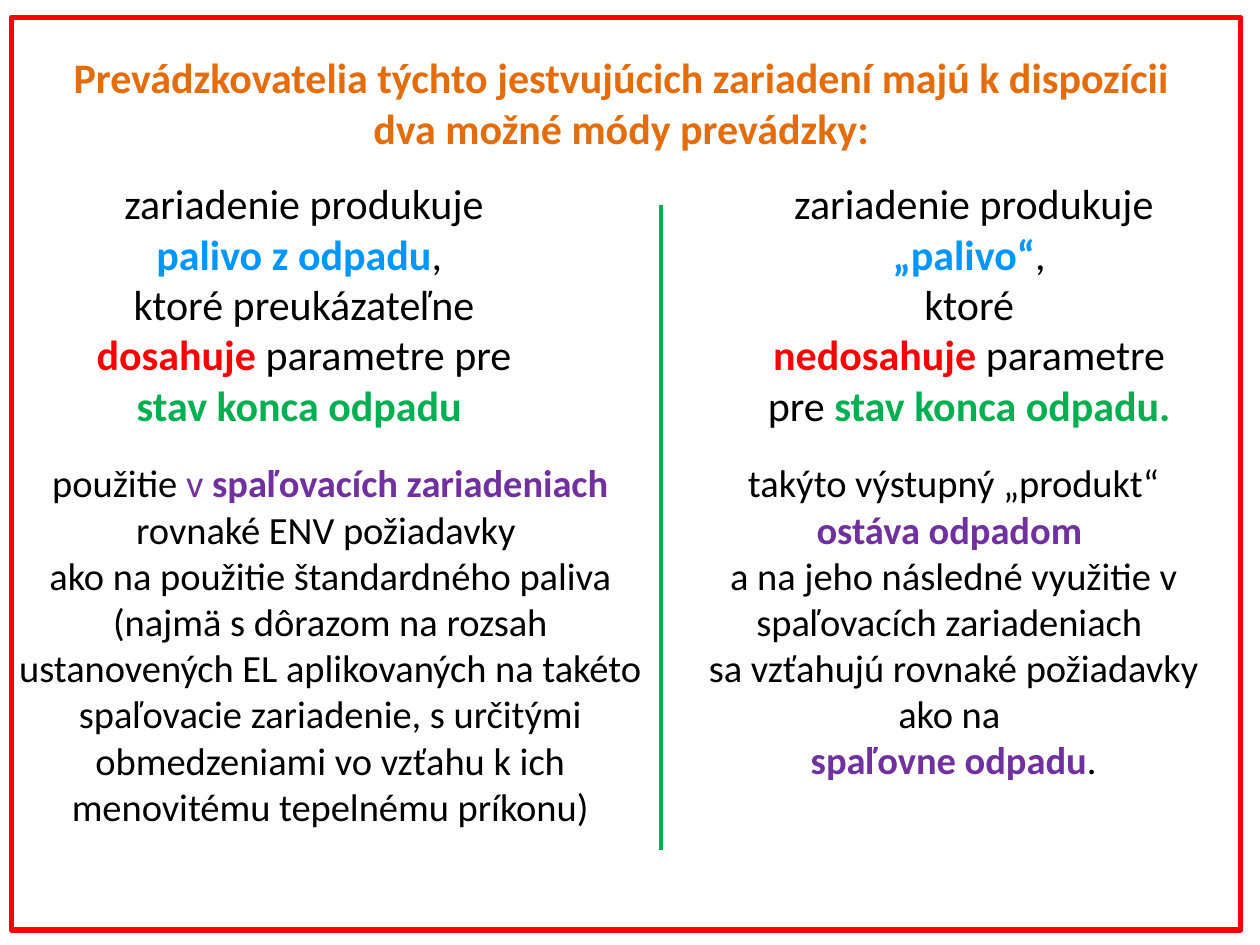
"""Build a slide comparing two operating modes of waste fuel facilities."""
import pptx
import pptx.dml.color
import pptx.enum.shapes
import pptx.enum.text
import pptx.oxml
import pptx.util

Pt = pptx.util.Pt
RGBColor = pptx.dml.color.RGBColor
ORANGE = RGBColor(0xE4, 0x6C, 0x0A)
BLACK = RGBColor(0, 0, 0)
BLUE = RGBColor(0, 0x96, 0xFF)
RED = RGBColor(0xFF, 0, 0)
GREEN = RGBColor(0, 0xB0, 0x50)
PURPLE = RGBColor(0x70, 0x30, 0xA0)

FRAME_FORMAT = {
    "word_wrap": True,
    "auto_size": pptx.enum.text.MSO_AUTO_SIZE.NONE,
    "vertical_anchor": pptx.enum.text.MSO_ANCHOR.TOP,
}


def fill_text(box, size, spans):
    """Write centred spans of (text, colour, bold) into a box."""
    for name, value in FRAME_FORMAT.items():
        setattr(box.text_frame, name, value)
    para = box.text_frame.paragraphs[0]
    para.alignment = pptx.enum.text.PP_ALIGN.CENTER
    for text, colour, bold in spans:
        for index, piece in enumerate(text.split("\n")):
            if index:
                para.add_line_break()
            if piece:
                span = para.add_run()
                span.text = piece
                font_format = {"name": "Calibri", "size": Pt(size), "bold": bold}
                for name, value in font_format.items():
                    setattr(span.font, name, value)
                span.font.color.rgb = colour


deck = pptx.Presentation()
deck.slide_width, deck.slide_height = Pt(720), Pt(540)
page = deck.slides.add_slide(deck.slide_layouts[5])

title = page.shapes.title
title_place = {"left": 31, "top": 26, "width": 648, "height": 70.5}
for name, value in title_place.items():
    setattr(title, name, Pt(value))
fill_text(title, 24, [
    ("Prevádzkovatelia týchto jestvujúcich zariadení majú k dispozícii "
     "dva možné módy prevádzky:", ORANGE, True),
])

text_blocks = [
    ((48, 98, 251.5, 157.5), 24, [
        ("zariadenie produkuje ", BLACK, False),
        ("palivo z odpadu", BLUE, True),
        (", \nktoré preukázateľne ", BLACK, False),
        ("dosahuje", RED, True),
        (" parametre pre ", BLACK, False),
        ("stav konca odpadu ", GREEN, True),
    ]),
    ((417, 98, 279, 157.5), 24, [
        ("zariadenie produkuje ", BLACK, False),
        ("„palivo“", BLUE, True),
        (", \nktoré \n", BLACK, False),
        ("nedosahuje", RED, True),
        (" parametre \npre ", BLACK, False),
        ("stav konca odpadu. ", GREEN, True),
    ]),
    ((0, 259, 377.5, 294.5), 22, [
        ("použitie ", BLACK, False),
        ("v ", PURPLE, False),
        ("spaľovacích zariadeniach ", PURPLE, True),
        ("rovnaké ENV požiadavky \nako na použitie štandardného paliva "
         "(najmä s dôrazom na rozsah ustanovených EL aplikovaných na takéto "
         "spaľovacie zariadenie, s určitými obmedzeniami vo vzťahu k ich "
         "menovitému tepelnému príkonu)", BLACK, False),
    ]),
    ((394, 259, 302, 255), 22, [
        ("takýto výstupný „produkt“ ", BLACK, False),
        ("ostáva odpadom \n", PURPLE, True),
        ("a na jeho následné využitie v spaľovacích zariadeniach \n"
         "sa vzťahujú rovnaké požiadavky ako na \n", BLACK, False),
        ("spaľovne odpadu", PURPLE, True),
        (".", BLACK, False),
    ]),
]
for place, size, spans in text_blocks:
    box = page.shapes.add_textbox(*map(Pt, place))
    fill_text(box, size, spans)

border = page.shapes.add_shape(
    pptx.enum.shapes.MSO_SHAPE.RECTANGLE, Pt(6.5), Pt(10), Pt(702.5), Pt(521.5))
border.shadow.inherit = False
border.fill.background()
border.line.color.rgb = RED
border.line.width = Pt(3)

divider = page.shapes.add_connector(
    pptx.enum.shapes.MSO_CONNECTOR.STRAIGHT, Pt(377.5), Pt(117), Pt(377.5), Pt(485.5))
divider.line.color.rgb = GREEN
divider.line.width = Pt(2.25)
divider._element.spPr.append(pptx.oxml.parse_xml(
    '<a:effectLst xmlns:a="http://schemas.openxmlformats.org/drawingml/2006/main"/>'))

deck.save("out.pptx")
